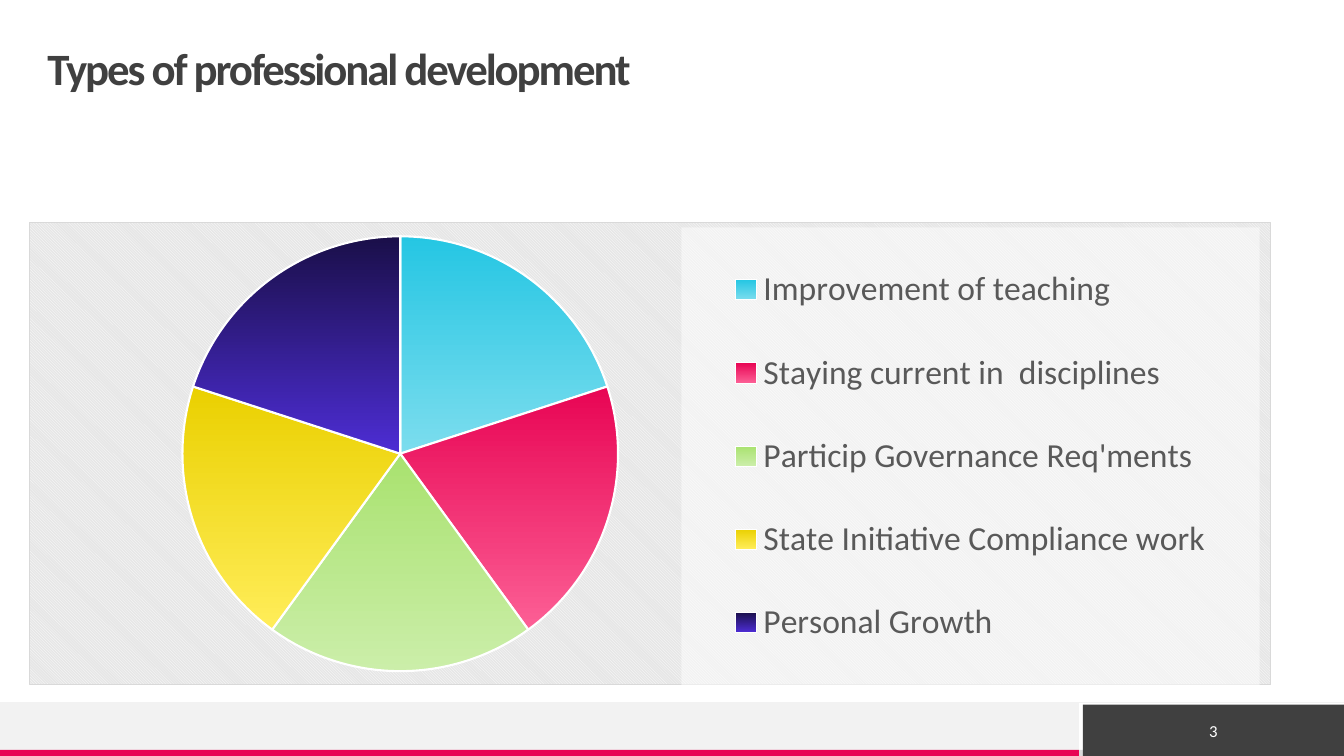
from pptx import Presentation
from pptx.chart.data import CategoryChartData
from pptx.dml.color import RGBColor
from pptx.enum import chart as ch, shapes, text
from pptx.oxml import parse_xml
from pptx.oxml.ns import nsdecls, qn
from pptx.util import Inches, Pt

TITLE = "Types of professional development"
PAGE = "3"
SERIES = "Series 1"
# category, value, gradient top, gradient bottom
SLICES = [
    ("Improvement of teaching", 20, "25C6E3", "7CDDEE"),
    ("Staying current in  disciplines", 20, "E80554", "FC5F95"),
    ("Particip Governance Req'ments", 20, "A9E26F", "CBEEA9"),
    ("State Initiative Compliance work", 20, "EAD000", "FFED59"),
    ("Personal Growth", 20, "1A0F49", "4D2DD4"),
]
THEME = dict(
    font="Calibri", dark="404040", white="FFFFFF", band="F2F2F2", red="E80554",
    cyan="25C6E3", gray="DADADA", legend="595959", panel="E6E6E6", border="D9D9D9",
    title_size=32, legend_size=24, page_size=12,
)
WIDTH, HEIGHT = 13.33, 7.5
FOOTER_TOP, STRIP_TOP = 6.97, 7.44
BAND_W, CYAN_X = 10.7, 12.86
FOOTER = [
    ((BAND_W, STRIP_TOP, CYAN_X - BAND_W, HEIGHT - STRIP_TOP), "gray"),
    ((0, FOOTER_TOP, BAND_W, STRIP_TOP - FOOTER_TOP), "band"),
    ((0, STRIP_TOP, BAND_W, HEIGHT - STRIP_TOP), "red"),
    ((CYAN_X, STRIP_TOP, WIDTH - CYAN_X, HEIGHT - STRIP_TOP), "cyan"),
]
CHART = (0.29, 2.2, 12.32, 4.6)
PIE = (1.81, 2.34, 4.33, 4.33)
LEGEND = (6.76, 2.25, 5.74, 4.55)


def rgb(name):
    return RGBColor.from_string(THEME[name])


def add_rect(slide, box, color):
    sp = slide.shapes.add_shape(shapes.MSO_SHAPE.RECTANGLE, *map(Inches, box))
    sp.shadow.inherit = False
    sp.fill.solid()
    sp.fill.fore_color.rgb = rgb(color)
    sp.line.fill.background()
    return sp


def write(sp, words, size, color, bold=False, align=text.PP_ALIGN.LEFT,
          leading=1.0, spacing=0):
    tf = sp.text_frame
    tf.word_wrap = True
    tf.vertical_anchor = text.MSO_ANCHOR.MIDDLE
    tf.margin_left = tf.margin_right = tf.margin_top = tf.margin_bottom = 0
    p = tf.paragraphs[0]
    p.alignment, p.line_spacing = align, leading
    r = p.add_run()
    r.text = words
    r.font.name, r.font.size, r.font.bold = THEME["font"], Pt(THEME[size]), bold
    r.font.color.rgb = rgb(color)
    if spacing:
        r.font._element.set("spc", str(int(spacing * 100)))


def place(parent, box, before, inner=False):
    """Fix a chart part at a slide position, as fractions of the chart area."""
    for old in parent.findall(qn("c:layout")):
        parent.remove(old)
    x, y, w, h = CHART
    parts = dict(x=(box[0] - x) / w, y=(box[1] - y) / h, w=box[2] / w, h=box[3] / h)
    target = '<c:layoutTarget val="inner"/>' if inner else ""
    modes = '<c:xMode val="edge"/><c:yMode val="edge"/>'
    sizes = "".join(f'<c:{k} val="{v:.3f}"/>' for k, v in parts.items())
    before.addprevious(parse_xml(
        f'<c:layout {nsdecls("c")}><c:manualLayout>{target}{modes}{sizes}'
        '</c:manualLayout></c:layout>'))


def paint(parent, fill):
    """Give a chart part its fill and line, ahead of its text properties."""
    parent.find(qn("c:txPr")).addprevious(
        parse_xml(f'<c:spPr {nsdecls("c", "a")}>{fill}</c:spPr>'))


def solid(name, extra=""):
    return (f'<a:solidFill><a:srgbClr val="{THEME[name]}">{extra}'
            '</a:srgbClr></a:solidFill>')


def add_pie(slide):
    data = CategoryChartData()
    data.categories = [s[0] for s in SLICES]
    data.add_series(SERIES, [s[1] for s in SLICES])
    chart = slide.shapes.add_chart(
        ch.XL_CHART_TYPE.PIE, *map(Inches, CHART), data).chart
    chart.has_title = False
    chart.font.name, chart.font.size = THEME["font"], Pt(10)
    plot = chart.plots[0]
    plot.vary_by_categories = True
    for i, (_, _, *colors) in enumerate(SLICES):
        fmt = plot.series[0].points[i].format
        fmt.fill.gradient()
        fmt.fill.gradient_angle = 270
        for stop, color, pos in zip(fmt.fill.gradient_stops, colors, (0, 1)):
            stop.color.rgb = RGBColor.from_string(color)
            stop.position = pos
        fmt.line.color.rgb = rgb("white")
        fmt.line.width = Pt(1.5)

    chart.has_legend = True
    legend = chart.legend
    legend.position = ch.XL_LEGEND_POSITION.RIGHT
    legend.include_in_layout = False
    legend.font.name, legend.font.size = THEME["font"], Pt(THEME["legend_size"])
    legend.font.color.rgb = rgb("legend")

    space = chart._chartSpace
    area = space.find(".//" + qn("c:plotArea"))
    box = space.find(".//" + qn("c:legend"))
    place(area, PIE, area.find(qn("c:pieChart")), inner=True)
    place(box, LEGEND, box.find(qn("c:overlay")))
    paint(box, solid("white", '<a:alpha val="50000"/>') + "<a:ln><a:noFill/></a:ln>")
    paint(space, '<a:pattFill prst="dkDnDiag">'
          f'<a:fgClr><a:srgbClr val="{THEME["white"]}"/></a:fgClr>'
          f'<a:bgClr><a:srgbClr val="{THEME["panel"]}"/></a:bgClr></a:pattFill>'
          f'<a:ln w="9525">{solid("border")}</a:ln>')


def main():
    prs = Presentation()
    prs.slide_width, prs.slide_height = Inches(WIDTH), Inches(HEIGHT)
    slide = prs.slides.add_slide(prs.slide_layouts[6])
    for box, color in FOOTER:
        add_rect(slide, box, color)
    rule = slide.shapes.add_connector(
        shapes.MSO_CONNECTOR.STRAIGHT, Inches(WIDTH), Inches(FOOTER_TOP),
        0, Inches(FOOTER_TOP))
    rule.line.color.rgb, rule.line.width = rgb("band"), Pt(0.5)
    rule._element.spPr.append(parse_xml(f'<a:effectLst {nsdecls("a")}/>'))

    title = slide.shapes.add_textbox(*map(Inches, (0.47, 0.47, 12.39, 0.47)))
    write(title, TITLE, "title_size", "dark", bold=True, leading=0.9, spacing=-1.5)
    add_pie(slide)
    page = add_rect(slide, (10.74, 6.99, 2.59, 0.51), "dark")
    write(page, PAGE, "page_size", "white", align=text.PP_ALIGN.CENTER)
    prs.save("out.pptx")


if __name__ == "__main__":
    main()
